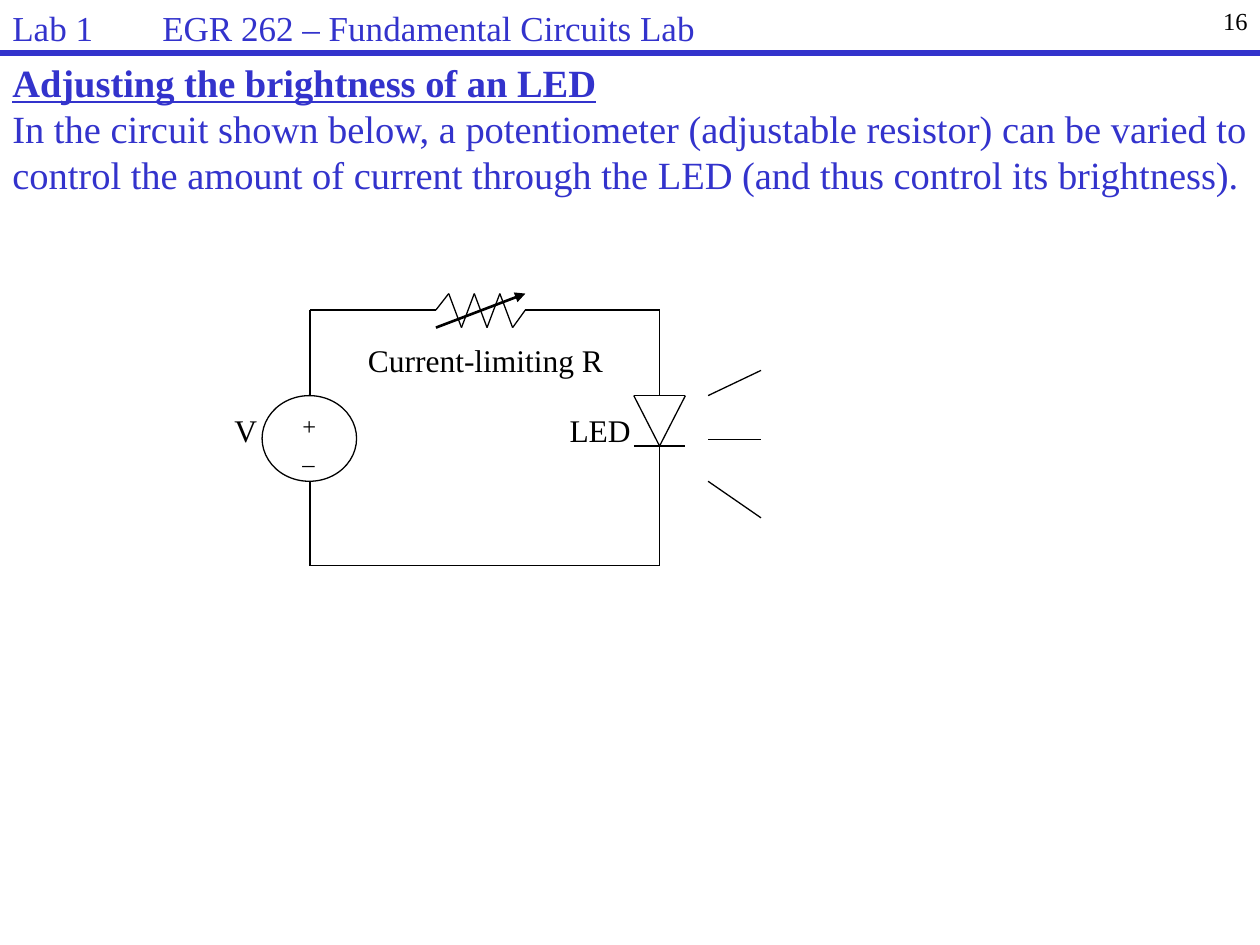
from itertools import pairwise

from lxml import etree
from pptx import Presentation
from pptx.dml.color import RGBColor
from pptx.enum.shapes import MSO_CONNECTOR, MSO_SHAPE
from pptx.enum.text import PP_ALIGN
from pptx.oxml.ns import qn
from pptx.util import Inches, Pt

STRAIGHT = MSO_CONNECTOR.STRAIGHT
ELLIPSE = MSO_SHAPE.OVAL
LEFT, RIGHT = PP_ALIGN.LEFT, PP_ALIGN.RIGHT

COLORS = {"title": "3333CC", "ink": "000000"}
FONT = "Times New Roman"

deck = Presentation()
deck.slide_width, deck.slide_height = Inches(10), Inches(7.5)
page = deck.slides.add_slide(deck.slide_layouts[6])


def add_text(text, left, top, width, height, size=18, color="ink",
             align=LEFT, label=False, heading=False, before=0):
    """Labels have no insets and do not wrap; heading underlines the first line."""
    box = page.shapes.add_textbox(Inches(left), Inches(top), Inches(width), Inches(height))
    frame = box.text_frame
    frame.word_wrap = not label
    if label:
        frame.margin_left = frame.margin_right = frame.margin_top = frame.margin_bottom = 0
    frame.text = text
    for index, para in enumerate(frame.paragraphs):
        para.alignment = align
        para.space_before = Pt(before)
        span = para.runs[0]
        for span in para.runs:
            span.font.name, span.font.size = FONT, Pt(size)
            span.font.color.rgb = RGBColor.from_string(COLORS[color])
            span.font.bold = span.font.underline = heading and index == 0
    return box


def add_path(*points, color="ink", width=0.75, arrow=False):
    """Draws straight lines from each point to the next."""
    for (x1, y1), (x2, y2) in pairwise(points):
        line = page.shapes.add_connector(STRAIGHT, Inches(x1), Inches(y1), Inches(x2), Inches(y2))
        line.line.color.rgb = RGBColor.from_string(COLORS[color])
        line.line.width = Pt(width)
        if arrow:
            etree.SubElement(line.line._get_or_add_ln(), qn("a:tailEnd"), type="triangle")
        etree.SubElement(line._element.spPr, qn("a:effectLst"))


# Explanation
add_text("Adjusting the brightness of an LED\n"
         "In the circuit shown below, a potentiometer (adjustable resistor) can be varied to "
         "control the amount of current through the LED (and thus control its brightness).",
         0, 0.42, 10, 1.58, size=22, color="title", heading=True)

# Circuit loop
source_x, led_x = 2.46, 5.235
wire_top, wire_bottom = 2.46, 4.49
part_top, source_bottom, led_bottom = 3.14, 3.82, 3.54

# Variable resistor: six peaks between two half steps
resistor_left, resistor_right = 3.46, 4.17
peak, valley = 2.33, 2.6
step = (resistor_right - resistor_left) / 7
zigzag = [(resistor_left + step * i, peak if i % 2 else valley) for i in range(1, 7)]
add_path((source_x, part_top), (source_x, wire_top), (resistor_left, wire_top), *zigzag,
         (resistor_right, wire_top), (led_x, wire_top), (led_x, part_top))
add_path((led_x, led_bottom), (led_x, wire_bottom), (source_x, wire_bottom),
         (source_x, source_bottom))

# LED with its rays
led_left, led_right = led_x - 0.205, led_x + 0.205
add_path((led_x, led_bottom), (led_left, part_top), (led_right, part_top), (led_x, led_bottom))
add_path((led_left, led_bottom), (led_right, led_bottom))
for start_y, end_y in [(3.14, 2.94), (3.49, 3.49), (3.82, 4.11)]:
    add_path((5.62, start_y), (6.04, end_y))

# Voltage source
source = page.shapes.add_shape(ELLIPSE, Inches(2.08), Inches(part_top), Inches(0.75), Inches(0.68))
source.shadow.inherit = False
source.fill.background()
source.line.color.rgb = RGBColor.from_string(COLORS["ink"])
source.line.width = Pt(0.75)

add_path((resistor_left, valley), (resistor_right, peak), width=1.5, arrow=True)

# Labels
for text, left, top, width, height, size in [
    ("LED", 4.52, 3.26, 0.49, 0.3, 18),
    ("+", 2.4, 3.26, 0.11, 0.23, 14),
    ("_", 2.4, 3.49, 0.1, 0.23, 14),
    ("V", 1.86, 3.26, 0.18, 0.3, 18),
    ("Current-limiting R", 2.92, 2.71, 1.89, 0.3, 18),
]:
    add_text(text, left, top, width, height, size=size, label=True)

# Page header
add_text("16", 7.92, 0, 2.08, 0.42, size=14, align=RIGHT)
add_path((0, 0.42), (10, 0.42), color="title", width=3)
header = add_text("Lab 1\tEGR 262 – Fundamental Circuits Lab", 0, 0, 7.33, 0.33,
                  size=20, color="title", before=4)
tabs = etree.SubElement(header.text_frame.paragraphs[0]._p.get_or_add_pPr(), qn("a:tabLst"))
etree.SubElement(tabs, qn("a:tab"), pos=str(Inches(1.19)), algn="l")

deck.save("out.pptx")
